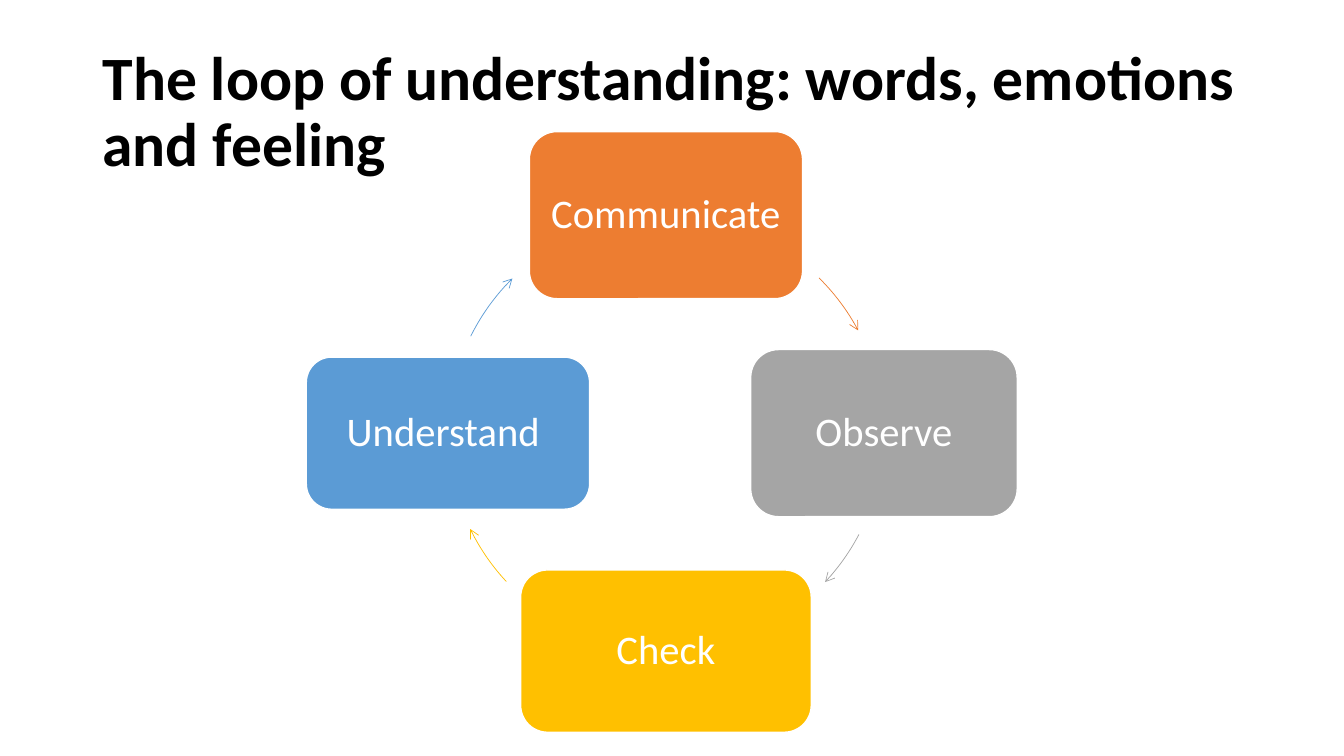
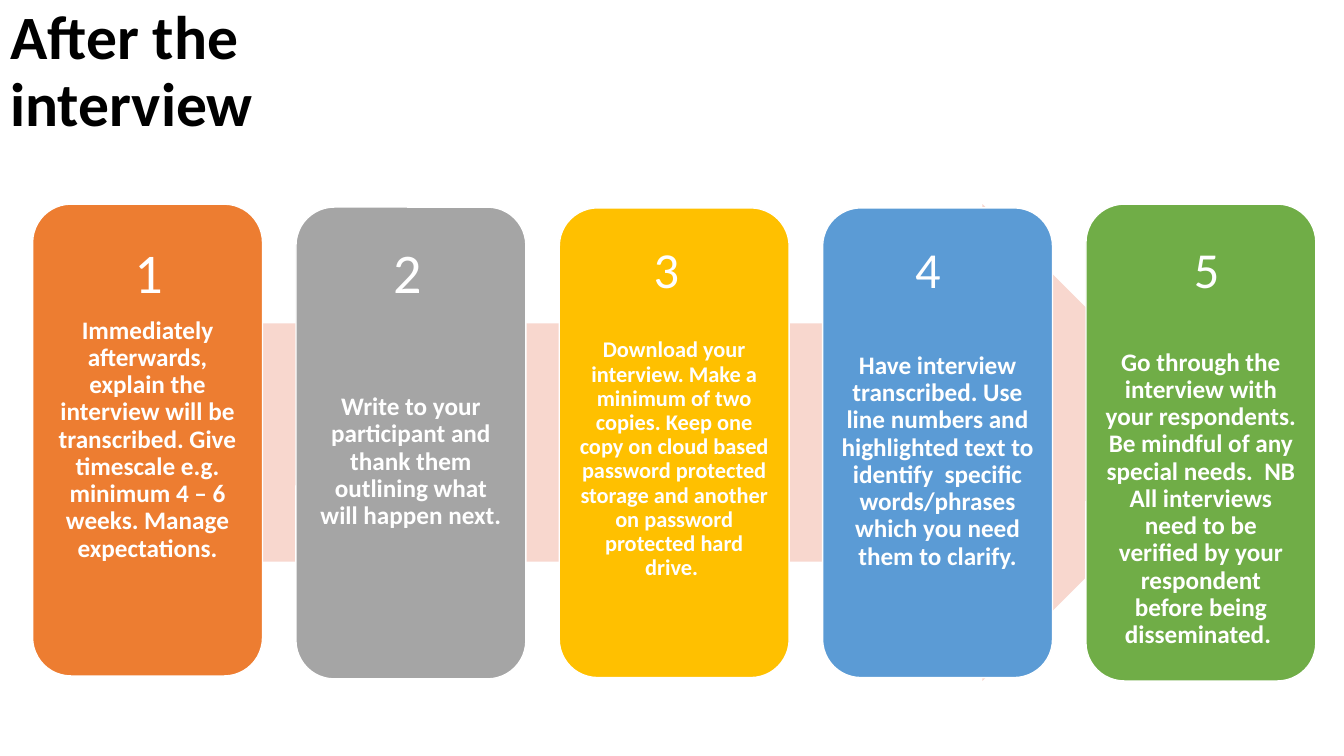
from dataclasses import dataclass
from math import cos, radians, sin

from lxml import etree
from pptx import Presentation
from pptx.dml.color import RGBColor
from pptx.enum.shapes import MSO_SHAPE
from pptx.enum.text import MSO_ANCHOR, PP_ALIGN
from pptx.oxml.ns import qn
from pptx.util import Pt

ROUNDED = MSO_SHAPE.ROUNDED_RECTANGLE
RIGHT_ARROW = MSO_SHAPE.RIGHT_ARROW
LEFT, CENTER = PP_ALIGN.LEFT, PP_ALIGN.CENTER
TOP, MIDDLE = MSO_ANCHOR.TOP, MSO_ANCHOR.MIDDLE
BLANK_LAYOUT = 6


@dataclass(frozen=True)
class Theme:
    font: str = "Calibri"
    black: str = "000000"
    white: str = "FFFFFF"
    blush: str = "F8D7CE"
    orange: str = "ED7D31"
    grey: str = "A5A5A5"
    gold: str = "FFC000"
    blue: str = "5B9BD5"
    green: str = "70AD47"
    title_size: float = 44
    loop_size: float = 29
    card_size: float = 18
    small_card_size: float = 16
    number_size: float = 40
    small_number_size: float = 36
    outline: float = 1
    arc_width: float = 0.5


THEME = Theme()


def color(value):
    return RGBColor.from_string(value)


def write(shape, text, *, size, fill=THEME.white, bold=False, align=CENTER,
          anchor=MIDDLE, spacing=0.9, inset=(7.2, 3.6), drop=0):
    """Fill a shape with one paragraph; drop is extra room above the text."""
    frame = shape.text_frame
    frame.word_wrap = True
    frame.vertical_anchor = anchor
    side, edge = inset
    frame.margin_left = frame.margin_right = Pt(side)
    frame.margin_top, frame.margin_bottom = Pt(edge + drop), Pt(edge)
    paragraph = frame.paragraphs[0]
    paragraph.alignment = align
    paragraph.line_spacing = spacing
    run = paragraph.add_run()
    run.text = text
    run.font.name = THEME.font
    run.font.size = Pt(size)
    run.font.bold = bold
    run.font.color.rgb = color(fill)


def widen_frame(freeform, left, top, side):
    """Give a freeform a square frame and leave its outline in place."""
    shift_x, shift_y = freeform.left - left, freeform.top - top
    for point in freeform.element.iter(qn("a:pt")):
        point.set("x", str(int(point.get("x")) + shift_x))
        point.set("y", str(int(point.get("y")) + shift_y))
    for outline in freeform.element.iter(qn("a:path")):
        outline.set("w", str(side))
        outline.set("h", str(side))
    freeform.left, freeform.top = left, top
    freeform.width = freeform.height = side


class Deck:
    def __init__(self, theme):
        self.theme = theme
        self.presentation = Presentation()
        self.presentation.slide_width = Pt(960)
        self.presentation.slide_height = Pt(540)
        self.slide = None

    def start_slide(self, title, left, top, width):
        layout = self.presentation.slide_layouts[BLANK_LAYOUT]
        self.slide = self.presentation.slides.add_slide(layout)
        self.text(title, left, top, width, 104.4, size=self.theme.title_size,
                  fill=self.theme.black, bold=True, align=LEFT)

    def text(self, text, left, top, width, height, **text_format):
        box = self.slide.shapes.add_textbox(
            Pt(left), Pt(top), Pt(width), Pt(height))
        write(box, text, **text_format)

    def block(self, kind, left, top, width, height, fill, outline=None):
        shape = self.slide.shapes.add_shape(
            kind, Pt(left), Pt(top), Pt(width), Pt(height))
        shape.shadow.inherit = False
        shape.fill.solid()
        shape.fill.fore_color.rgb = color(fill)
        if outline:
            shape.line.color.rgb = color(outline)
            shape.line.width = Pt(self.theme.outline)
        else:
            shape.line.fill.background()
        return shape

    def panel(self, text, left, top, width, height, fill, **text_format):
        """Add a rounded, white-edged block that carries text."""
        shape = self.block(ROUNDED, left, top, width, height, fill,
                           self.theme.white)
        write(shape, text, **text_format)

    def arc_arrow(self, center, radius, start, end, line, steps=12):
        """Draw part of a circle between two clockwise angles, with a head."""
        points = []
        for step in range(steps + 1):
            angle = radians(start + (end - start) * step / steps)
            points.append((Pt(center[0] + radius * cos(angle)),
                           Pt(center[1] + radius * sin(angle))))
        builder = self.slide.shapes.build_freeform(*points[0])
        builder.add_line_segments(points[1:], close=False)
        arc = builder.convert_to_shape()
        widen_frame(arc, Pt(center[0] - radius), Pt(center[1] - radius),
                    Pt(2 * radius))
        arc.shadow.inherit = False
        arc.fill.background()
        arc.line.color.rgb = color(line)
        arc.line.width = Pt(self.theme.arc_width)
        outline = arc.line._get_or_add_ln()
        etree.SubElement(outline, qn("a:tailEnd"), type="arrow")

    def save(self):
        self.presentation.save("out.pptx")


def build_loop(deck):
    theme = deck.theme
    deck.start_slide("The loop of understanding: words, emotions and feeling",
                     66.2, 28.8, 828)
    center, radius = (475.7, 309.4), 155.7
    # text, width, height, fill, angles of the arc that follows
    stages = [
        ("Communicate", 195.2, 119.4, theme.orange, (-45.4, -28.1)),
        ("Observe", 190.4, 119.4, theme.grey, (27.7, 43.1)),
        ("Check", 207.6, 116, theme.gold, (137.1, 153.9)),
        ("Understand ", 202.4, 108.7, theme.blue, (206.4, 225.2)),
    ]
    for index, (text, width, height, fill, arc) in enumerate(stages):
        angle = radians(90 * index - 90)
        left = center[0] + radius * cos(angle) - width / 2
        top = center[1] + radius * sin(angle) - height / 2
        deck.panel(text, left, top, width, height, fill,
                   size=theme.loop_size, inset=(8.6, 8.6))
        deck.arc_arrow(center, radius, *arc, fill)


def build_steps(deck):
    theme = deck.theme
    deck.start_slide("After the interview", 0.3, 0, 351.4)
    deck.block(RIGHT_ARROW, 92.2, 145.8, 779.8, 340.6, theme.blush)
    large, small = theme.number_size, theme.small_number_size
    body, compact = theme.card_size, theme.small_card_size
    # text, fill, top, height, text size, lines of drop, number left, number size
    cards = [
        ("Immediately afterwards, explain the interview will be transcribed. "
         "Give timescale e.g. minimum 4 – 6 weeks. Manage expectations.",
         theme.orange, 145.8, 337, body, 0, 75.4, large),
        ("Write to your participant and thank them outlining what will "
         "happen next.",
         theme.grey, 147.9, 337, body, 1, 260.3, large),
        ("Download your interview. Make a minimum of two copies. Keep one "
         "copy on cloud based password protected storage and another on "
         "password protected hard drive. ",
         theme.gold, 148.5, 335.5, compact, 1, 445.4, small),
        ("Have interview transcribed. Use line numbers and highlighted text "
         "to identify  specific words/phrases which you need them to clarify.",
         theme.blue, 148.5, 335.5, body, 1, 632.2, small),
        ("Go through the interview with your respondents. Be mindful of any "
         "special needs.  NB All interviews need to be verified by your "
         "respondent before being disseminated. ",
         theme.green, 145.8, 340.6, body, 3, 831.3, small),
    ]
    for index, card in enumerate(cards):
        text, fill, top, height, size, lines, number_left, number_size = card
        deck.panel(text, 23.3 + 188.1 * index, top, 164.2, height, fill,
                   size=size, bold=True, inset=(5, 5),
                   drop=1.5 * size * lines)
        deck.text(str(index + 1), number_left, 166.3, 61.2,
                  1.4 * number_size, size=number_size, anchor=TOP, spacing=1)


def main():
    deck = Deck(THEME)
    build_loop(deck)
    build_steps(deck)
    deck.save()


if __name__ == "__main__":
    main()
